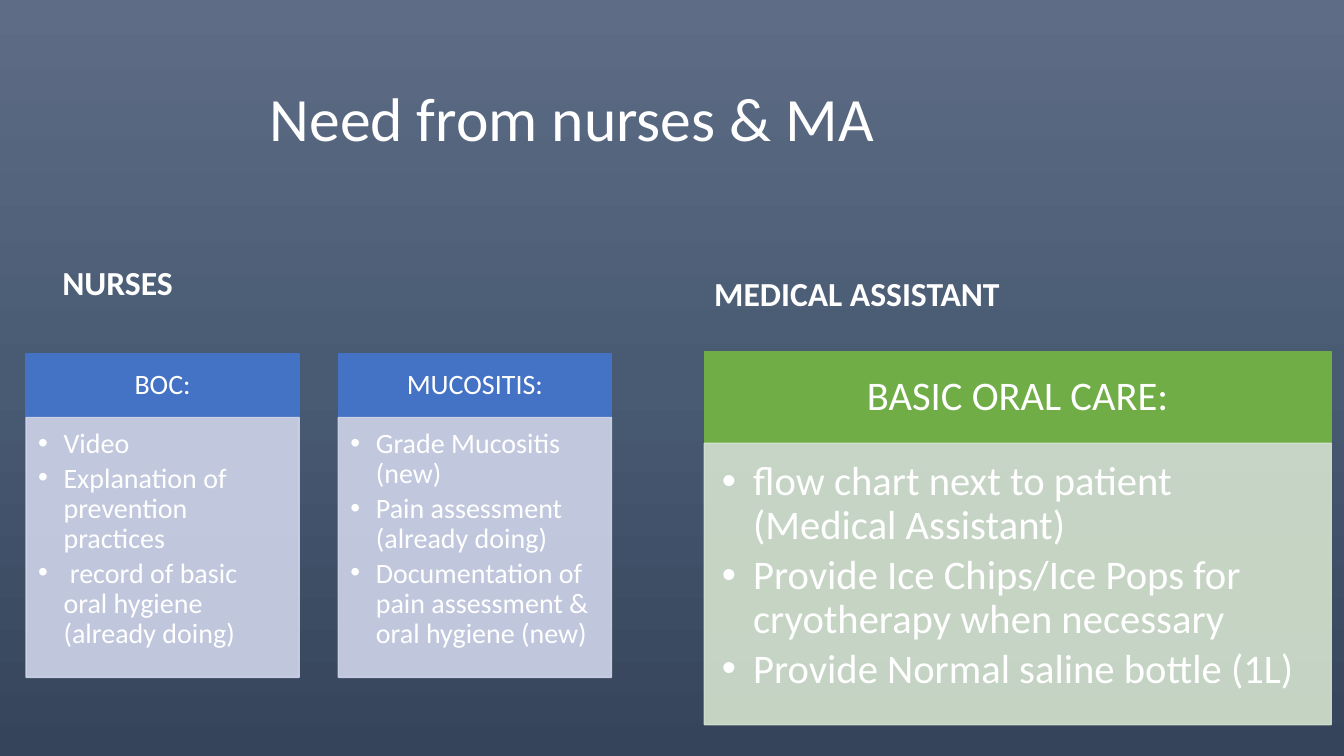
from copy import deepcopy

from lxml import etree
from pptx import Presentation
from pptx.dml.color import RGBColor
from pptx.enum.shapes import MSO_SHAPE
from pptx.enum.text import MSO_ANCHOR, PP_ALIGN
from pptx.oxml.ns import qn
from pptx.util import Cm, Pt

RECTANGLE = MSO_SHAPE.RECTANGLE
TOP, MIDDLE, BOTTOM = MSO_ANCHOR.TOP, MSO_ANCHOR.MIDDLE, MSO_ANCHOR.BOTTOM
LEFT, CENTER = PP_ALIGN.LEFT, PP_ALIGN.CENTER

WHITE = RGBColor(0xFF, 0xFF, 0xFF)
BLUE = RGBColor(0x44, 0x72, 0xC4)
PALE_BLUE = RGBColor(0xCF, 0xD5, 0xEA)
GREEN = RGBColor(0x70, 0xAD, 0x47)
PALE_GREEN = RGBColor(0xD5, 0xE3, 0xCF)
BACKDROP = [
    (0, RGBColor(0x5E, 0x6D, 0x85)),
    (0.5, RGBColor(0x49, 0x5A, 0x73)),
    (1, RGBColor(0x35, 0x44, 0x5A)),
]

FONT = "Calibri"
NURSE_CARDS = [
    ("BOC:", ["Video", "Explanation of prevention practices",
              " record of basic oral hygiene (already doing)"]),
    ("MUCOSITIS:", ["Grade Mucositis (new)", "Pain assessment (already doing)",
                    "Documentation of pain assessment & oral hygiene (new)"]),
]
ASSISTANT_TASKS = [
    "flow chart next to patient (Medical Assistant)",
    "Provide Ice Chips/Ice Pops for cryotherapy when necessary",
    "Provide Normal saline bottle (1L)",
]


def apply(target, values):
    for name, value in values.items():
        setattr(target, name, value)


def paint_background(slide):
    fill = slide.background.fill
    fill.gradient()
    fill.gradient_angle = 270
    stops = next(slide.element.iter(qn("a:gsLst")))
    stops.append(deepcopy(stops[0]))
    for stop, (position, color) in zip(fill.gradient_stops, BACKDROP):
        stop.position = position
        stop.color.rgb = color


def write(frame, lines, size, anchor, align=LEFT, bold=False, after=0, indent=None):
    apply(frame, {"word_wrap": True, "vertical_anchor": anchor})
    for index, line in enumerate(lines):
        paragraph = frame.add_paragraph() if index else frame.paragraphs[0]
        apply(paragraph, {"alignment": align, "line_spacing": 0.9,
                          "space_after": Pt(size * after)})
        run = paragraph.add_run()
        run.text = line
        apply(run.font, {"name": FONT, "size": Pt(size), "bold": bold})
        run.font.color.rgb = WHITE
        if indent:
            properties = paragraph._p.get_or_add_pPr()
            properties.set("marL", str(indent))
            properties.set("indent", str(-indent))
            etree.SubElement(properties, qn("a:buFont")).set("typeface", "Arial")
            etree.SubElement(properties, qn("a:buChar")).set("char", "•")


def add_heading(slide, text, box, size, anchor, bold=False):
    heading = slide.shapes.add_textbox(*map(Cm, box))
    write(heading.text_frame, [text], size, anchor, bold=bold)


def add_panel(slide, box, color, size, insets, opacity=None):
    """Add a filled rectangle whose insets are given in ems."""
    panel = slide.shapes.add_shape(RECTANGLE, *map(Cm, box))
    panel.shadow.inherit = False
    panel.fill.solid()
    panel.fill.fore_color.rgb = color
    panel.line.color.rgb = color
    panel.line.width = Pt(1)
    if opacity:
        for rgb in panel._element.spPr.iter(qn("a:srgbClr")):
            etree.SubElement(rgb, qn("a:alpha")).set("val", str(opacity * 1000))
    sides = ("margin_left", "margin_top", "margin_right", "margin_bottom")
    apply(panel.text_frame, {side: Pt(size * em) for side, em in zip(sides, insets)})
    return panel.text_frame


def add_card(slide, label, tasks, corner, width, heights, colors, size, indent):
    left, top = corner
    header_height, body_height = heights
    header_color, body_color = colors
    header = add_panel(slide, (left, top, width, header_height), header_color,
                       size, (0.58, 0.33, 0.58, 0.33))
    write(header, [label], size, MIDDLE, CENTER)
    body = add_panel(slide, (left, top + header_height, width, body_height),
                     body_color, size, (0.43, 0.43, 0.58, 0.61), opacity=90)
    write(body, tasks, size, TOP, after=0.15, indent=Cm(indent))


def main():
    presentation = Presentation()
    apply(presentation, {"slide_width": Cm(33.87), "slide_height": Cm(19.05)})
    slide = presentation.slides.add_slide(presentation.slide_layouts[6])
    paint_background(slide)

    # Title and column headings
    add_heading(slide, "Need from nurses & MA", (6.55, 1.27, 23.93, 3.61), 44, MIDDLE)
    add_heading(slide, "NURSES", (1.32, 5.46, 14.12, 2.29), 24, BOTTOM, bold=True)
    add_heading(slide, "MEDICAL ASSISTANT", (17.75, 5.74, 14.17, 2.29), 24, BOTTOM,
                bold=True)

    # Nurses' cards
    for column, (label, tasks) in enumerate(NURSE_CARDS):
        add_card(slide, label, tasks, (0.66 + column * 7.87, 8.92), 6.88,
                 (1.6, 6.55), (BLUE, PALE_BLUE), 20, 0.64)

    # Medical assistant's card
    add_card(slide, "BASIC ORAL CARE:", ASSISTANT_TASKS, (17.75, 8.86), 15.8,
             (2.31, 7.09), (GREEN, PALE_GREEN), 29, 0.79)

    presentation.save("out.pptx")


if __name__ == "__main__":
    main()
